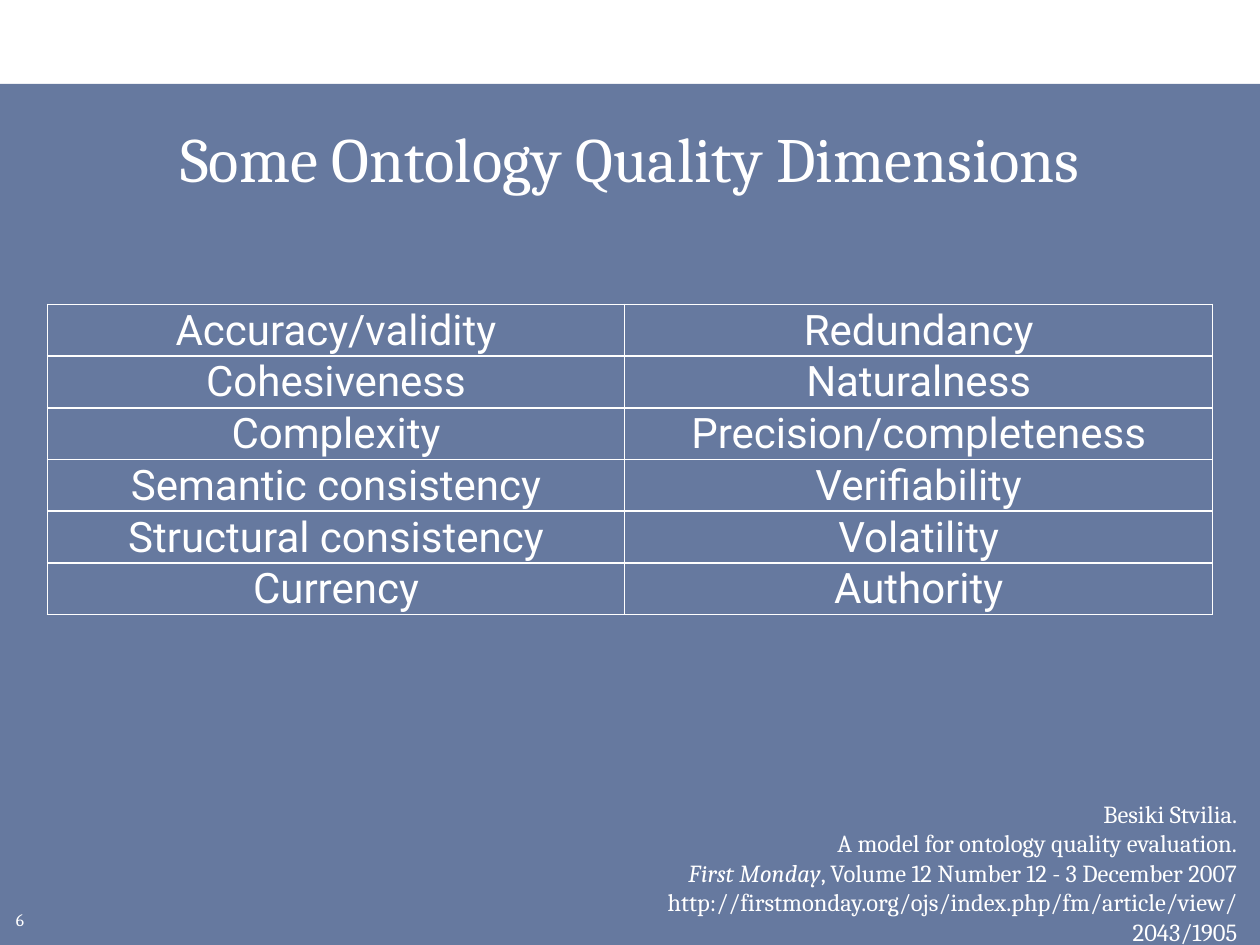
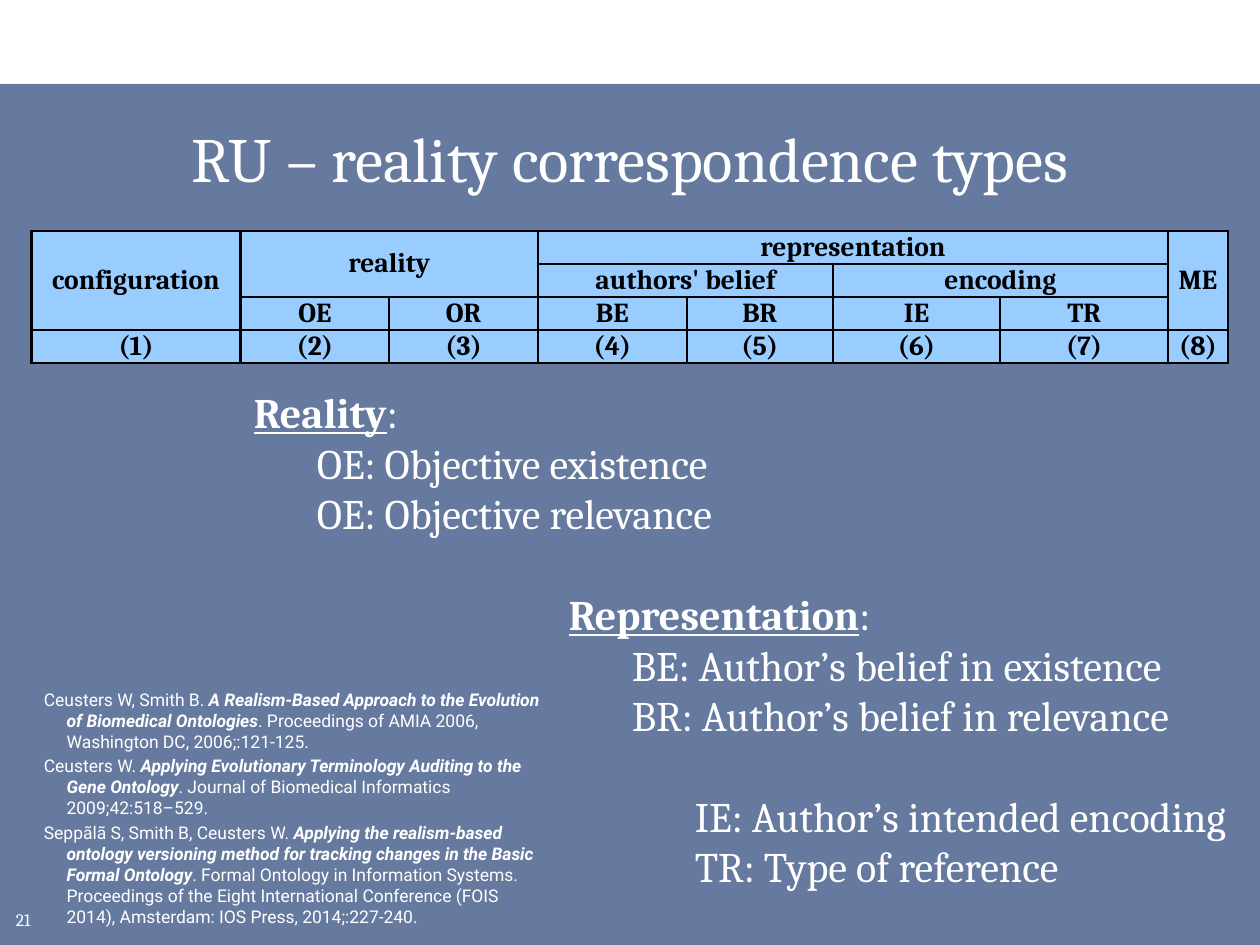
from dataclasses import dataclass, field
from typing import Optional

from lxml import etree
from pptx import Presentation
from pptx import util as u
from pptx.dml import color
from pptx.enum import shapes, text
from pptx.oxml import ns

COLOURS = {"navy": "002060", "white": "FFFFFF", "black": "000000", "sky": "99CCFF"}
SERIF, SANS = "Cambria", "Roboto"
HEADING = {"bold": True, "underline": True}
WORK_TITLE = {"bold": True, "italic": True}
LEFT, CENTRE, RIGHT = text.PP_ALIGN.LEFT, text.PP_ALIGN.CENTER, text.PP_ALIGN.RIGHT
MIDDLE = text.MSO_ANCHOR.MIDDLE


@dataclass
class Box:
    left: float
    top: float
    width: float
    height: float

    def lengths(self) -> list:
        return [u.Pt(v) for v in (self.left, self.top, self.width, self.height)]


@dataclass
class Face:
    name: str
    size: float
    colour: str = "white"
    style: dict = field(default_factory=dict)


@dataclass
class Line:
    spans: list
    margin: float = 0
    indent: float = 0
    before: float = 0


@dataclass
class Grid:
    box: Box
    columns: list
    rows: list
    face: Face
    insets: dict
    border: str
    border_width: float
    fill: Optional[str] = None
    merges: tuple = ()


def rgb(name: str) -> color.RGBColor:
    return color.RGBColor.from_string(COLOURS[name])


def set_all(target, values: dict) -> None:
    for key, value in values.items():
        setattr(target, key, value)


def write_line(paragraph, line: Line, face: Face, align) -> None:
    paragraph.alignment = align
    if line.before:
        paragraph.space_before = u.Pt(line.before)
    if line.margin:
        properties = paragraph._p.get_or_add_pPr()
        properties.set("marL", str(u.Pt(line.margin)))
        properties.set("indent", str(u.Pt(line.indent)))
    for words, style in line.spans:
        run = paragraph.add_run()
        run.text = words
        set_all(run.font, {"name": face.name, "size": u.Pt(face.size), **face.style, **style})
        run.font.color.rgb = rgb(face.colour)


def write_lines(frame, lines: list, face: Face, align=LEFT) -> None:
    for index, line in enumerate(lines):
        paragraph = frame.add_paragraph() if index else frame.paragraphs[0]
        write_line(paragraph, line, face, align)


def add_text(slide, box: Box, lines: list, face: Face, align=LEFT) -> None:
    frame = slide.shapes.add_textbox(*box.lengths()).text_frame
    frame.word_wrap = True
    write_lines(frame, lines, face, align)


def add_border(cell, name: str, width: float) -> None:
    properties = cell._tc.get_or_add_tcPr()
    for side in ("a:lnL", "a:lnR", "a:lnT", "a:lnB"):
        edge = etree.SubElement(properties, ns.qn(side), w=str(u.Pt(width)))
        solid = etree.SubElement(edge, ns.qn("a:solidFill"))
        etree.SubElement(solid, ns.qn("a:srgbClr"), val=COLOURS[name])


def add_grid(slide, grid: Grid) -> None:
    size = len(grid.rows), len(grid.columns)
    table = slide.shapes.add_table(*size, *grid.box.lengths()).table
    set_all(table, {"first_row": False, "horz_banding": False})
    for column, width in zip(table.columns, grid.columns):
        column.width = u.Pt(width)
    for row in table.rows:
        row.height = u.Pt(grid.box.height / len(grid.rows))
    for first, last in grid.merges:
        table.cell(*first).merge(table.cell(*last))
    for r, row in enumerate(grid.rows):
        for c, words in enumerate(row):
            cell = table.cell(r, c)
            set_all(cell, {"vertical_anchor": MIDDLE, **grid.insets})
            add_border(cell, grid.border, grid.border_width)
            if grid.fill:
                cell.fill.solid()
                cell.fill.fore_color.rgb = rgb(grid.fill)
            else:
                cell.fill.background()
            if words:
                write_lines(cell.text_frame, [Line([(words, {})])], grid.face, CENTRE)


def start_slide(deck, heading: str, number: str):
    slide = deck.slides.add_slide(deck.slide_layouts[5])
    title = slide.shapes.title
    band = slide.shapes.add_shape(
        shapes.MSO_SHAPE.RECTANGLE, *Box(0, 48, 720, 492).lengths())
    band.shadow.inherit = False
    band.line.fill.background()
    band.fill.solid()
    band.fill.fore_color.rgb = rgb("navy")
    tint = band.element.spPr.find(".//" + ns.qn("a:srgbClr"))
    etree.SubElement(tint, ns.qn("a:alpha"), val="60000")
    title.element.addprevious(band.element)

    set_all(title, dict(zip(("left", "top", "width", "height"), Box(18, 60, 684, 60).lengths())))
    set_all(title.text_frame, {"vertical_anchor": MIDDLE, "word_wrap": True,
                               "auto_size": text.MSO_AUTO_SIZE.NONE})
    write_lines(title.text_frame, [Line([(heading, {})])], Face(SERIF, 36), CENTRE)
    add_text(slide, Box(2, 516, 28, 18), [Line([(number, {})])], Face(SERIF, 10))
    return slide


def insets(side: float) -> dict:
    margins = {f"margin_{name}": u.Pt(side) for name in ("left", "right", "top")}
    return {**margins, "margin_bottom": 0}


def build_dimensions(deck) -> None:
    slide = start_slide(deck, "Some Ontology Quality Dimensions", "6")
    dimensions = [
        ("Accuracy/validity", "Redundancy"),
        ("Cohesiveness", "Naturalness"),
        ("Complexity", "Precision/completeness"),
        ("Semantic consistency", "Verifiability"),
        ("Structural consistency", "Volatility"),
        ("Currency", "Authority"),
    ]
    add_grid(slide, Grid(Box(27, 174, 666, 173.7), [330, 336], dimensions,
                         Face(SANS, 24), insets(0.72), "white", 1))
    citation = [
        Line([("Besiki Stvilia.", {})]),
        Line([("A model for ontology quality evaluation.", {})]),
        Line([("First Monday", {"italic": True}),
              (", Volume 12 Number 12 - 3 December 2007", {})]),
        Line([("http://firstmonday.org/ojs/index.php/fm/article/view/2043/1905", {})]),
    ]
    add_text(slide, Box(335.5, 453, 378.7, 75), citation, Face(SERIF, 14), RIGHT)


def build_correspondence(deck) -> None:
    slide = start_slide(deck, "RU – reality correspondence types", "21")
    header = [
        ("configuration", "reality", "", "representation", "", "", "", "ME"),
        ("", "", "", "authors' belief", "", "encoding", "", ""),
        ("", "OE", "OR", "BE", "BR", "IE", "TR", ""),
        [f"({n})" for n in range(1, 9)],
    ]
    merges = (((0, 0), (2, 0)), ((0, 1), (1, 2)), ((0, 3), (0, 6)),
              ((0, 7), (2, 7)), ((1, 3), (1, 4)), ((1, 5), (1, 6)))
    add_grid(slide, Grid(Box(18, 132, 684, 74.9),
                         [119.5, 85, 85, 85, 83.5, 95.75, 95.75, 34.5], header,
                         Face(SERIF, 15.7, "black", {"bold": True}), insets(0),
                         "black", 1.5, "sky", merges))

    gap = 28.9
    legend = [
        Line([("Reality", HEADING), (":", {})]),
        Line([("OE: Objective existence", {})], 36),
        Line([("OE: Objective relevance", {})], 36),
        Line([("Representation", HEADING), (":", {})], 180, before=gap),
        Line([("BE: Author’s belief in existence", {})], 216),
        Line([("BR: Author’s belief in relevance", {})], 216),
        Line([("IE: Author’s intended encoding", {})], 252, before=gap),
        Line([("TR: Type of reference", {})], 252),
    ]
    add_text(slide, Box(138, 217.5, 582, 298), legend, Face(SERIF, 24))

    references = [
        ("Ceusters W, Smith B. ",
         "A Realism-Based Approach to the Evolution of Biomedical Ontologies",
         ". Proceedings of AMIA 2006, Washington DC, 2006;:121-125."),
        ("Ceusters W. ",
         "Applying Evolutionary Terminology Auditing to the Gene Ontology",
         ". Journal of Biomedical Informatics 2009;42:518–529."),
        ("Seppãlã S, Smith B, Ceusters W. ",
         "Applying the realism-based ontology versioning method for tracking changes "
         "in the Basic Formal Ontology",
         ". Formal Ontology in Information Systems. Proceedings of the Eight International "
         "Conference (FOIS 2014), Amsterdam: IOS Press, 2014;:227-240."),
    ]
    lines = [Line([(authors, {}), (work, WORK_TITLE), (venue, {})], 13, -13, 2 if index else 0)
             for index, (authors, work, venue) in enumerate(references)]
    add_text(slide, Box(18, 390, 300, 144), lines, Face(SANS, 10))


def main() -> None:
    deck = Presentation()
    set_all(deck, {"slide_width": u.Pt(720), "slide_height": u.Pt(540)})
    build_dimensions(deck)
    build_correspondence(deck)
    deck.save("out.pptx")


if __name__ == "__main__":
    main()
